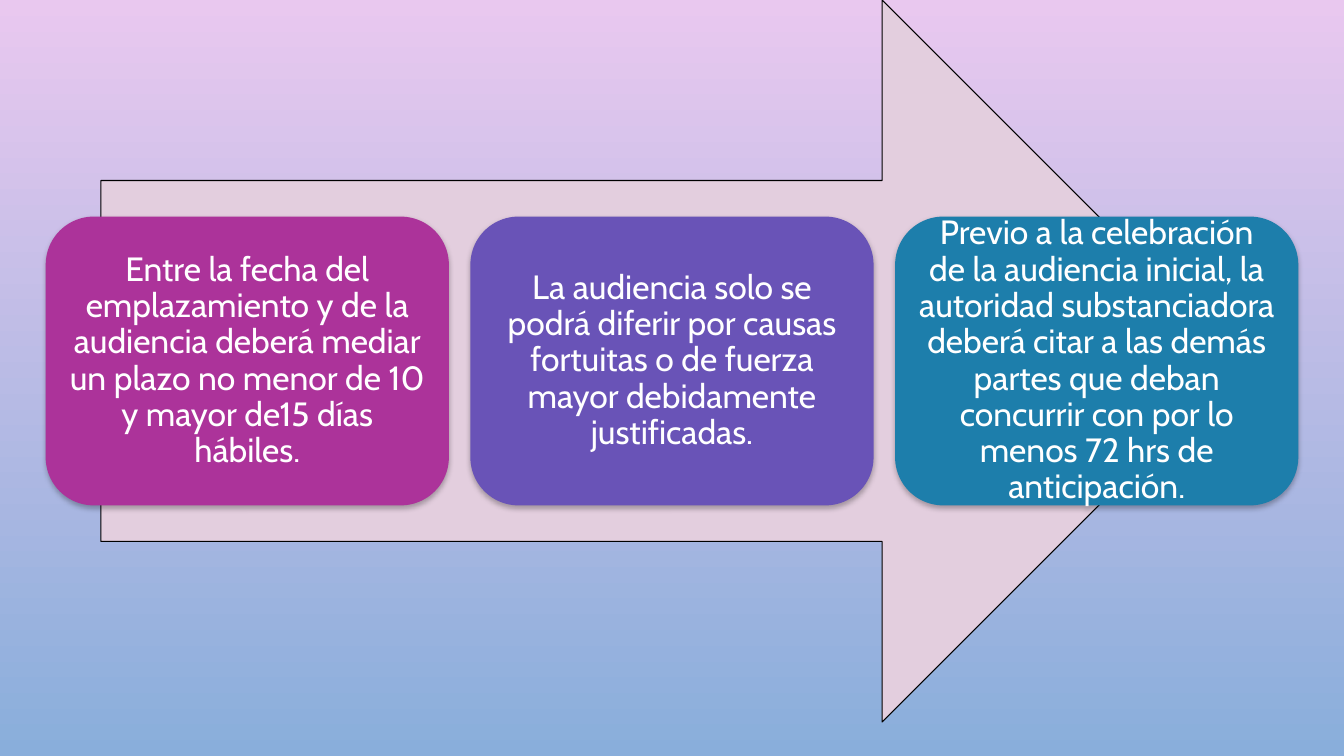
from lxml.etree import SubElement
from pptx import Presentation
from pptx.dml.color import RGBColor
from pptx.enum.shapes import MSO_SHAPE
from pptx.enum.text import MSO_ANCHOR, PP_ALIGN
from pptx.oxml.ns import qn
from pptx.util import Inches, Pt

FONT = "Cabin"
PINK_SKY = RGBColor(0xE9, 0xC8, 0xEF)
BLUE_SKY = RGBColor(0x89, 0xAE, 0xDB)
ROSE = RGBColor(0xE3, 0xCE, 0xDE)
MAGENTA = RGBColor(0xAC, 0x33, 0x9A)
VIOLET = RGBColor(0x69, 0x53, 0xB7)
TEAL = RGBColor(0x1D, 0x7E, 0xAB)
WHITE = RGBColor(0xFF, 0xFF, 0xFF)
BLACK = RGBColor(0, 0, 0)

# Shares of the slide's width and height
ARROW_WIDTH, ARROW_HEIGHT = 0.85, 0.955
CARD_WIDTH, CARD_HEIGHT = 0.3, 0.4 * ARROW_HEIGHT
CARD_MARGIN = 0.034

RULES = [
    (MAGENTA, "Entre la fecha del emplazamiento y de la audiencia deberá mediar "
              "un plazo no menor de 10 y mayor de15 días hábiles."),
    (VIOLET, "La audiencia solo se podrá diferir por causas fortuitas o de fuerza "
             "mayor debidamente justificadas."),
    (TEAL, "Previo a la celebración de la audiencia inicial, la autoridad "
           "substanciadora deberá citar a las demás partes que deban concurrir con "
           "por lo menos 72 hrs de anticipación."),
]


class ProcessSlide:
    def __init__(self, deck):
        self.width, self.height = deck.slide_width, deck.slide_height
        self.slide = deck.slides.add_slide(deck.slide_layouts[6])

    def background(self, top, bottom):
        fill = self.slide.background.fill
        fill.gradient()
        fill.gradient_angle = 270
        for stop, color in zip(fill.gradient_stops, (top, bottom)):
            stop.color.rgb = color

    def block(self, kind, left, top, width, height, color):
        """Add a flat preset shape, placed in shares of the slide."""
        block = self.slide.shapes.add_shape(
            kind, round(left * self.width), round(top * self.height),
            round(width * self.width), round(height * self.height))
        block.shadow.inherit = False
        block.fill.solid()
        block.fill.fore_color.rgb = color
        return block

    def arrow(self):
        arrow = self.block(MSO_SHAPE.RIGHT_ARROW, (1 - ARROW_WIDTH) / 2, 0,
                           ARROW_WIDTH, ARROW_HEIGHT, ROSE)
        arrow.line.color.rgb = BLACK
        arrow.line.width = Pt(0.75)

    def card(self, left, color, rule):
        card = self.block(MSO_SHAPE.ROUNDED_RECTANGLE, left,
                          (ARROW_HEIGHT - CARD_HEIGHT) / 2,
                          CARD_WIDTH, CARD_HEIGHT, color)
        card.line.fill.background()
        self.soft_shadow(card)
        frame = card.text_frame
        frame.word_wrap = True
        frame.vertical_anchor = MSO_ANCHOR.MIDDLE
        frame.margin_left = frame.margin_right = Inches(0.1)
        frame.margin_top = frame.margin_bottom = Inches(0.1)
        frame.text = rule
        paragraph = frame.paragraphs[0]
        paragraph.alignment = PP_ALIGN.CENTER
        paragraph.line_spacing = 0.9
        font = paragraph.runs[0].font
        font.name, font.size = FONT, Pt(24)
        font.color.rgb = WHITE

    def soft_shadow(self, card):
        effects = card.element.spPr.find(qn("a:effectLst"))
        shadow = SubElement(effects, qn("a:outerShdw"), blurRad=str(Pt(4)),
                            dist=str(Pt(2)), dir="5400000", rotWithShape="0")
        tint = SubElement(shadow, qn("a:srgbClr"), val=str(BLACK))
        SubElement(tint, qn("a:alpha"), val="28000")


def main():
    deck = Presentation()
    deck.slide_width, deck.slide_height = Inches(13.33), Inches(7.5)
    page = ProcessSlide(deck)

    # Backdrop
    page.background(PINK_SKY, BLUE_SKY)
    page.arrow()

    # Rules, evenly spread between the margins
    step = (1 - 2 * CARD_MARGIN - CARD_WIDTH) / (len(RULES) - 1)
    for column, (color, rule) in enumerate(RULES):
        page.card(CARD_MARGIN + column * step, color, rule)

    deck.save("out.pptx")


if __name__ == "__main__":
    main()
